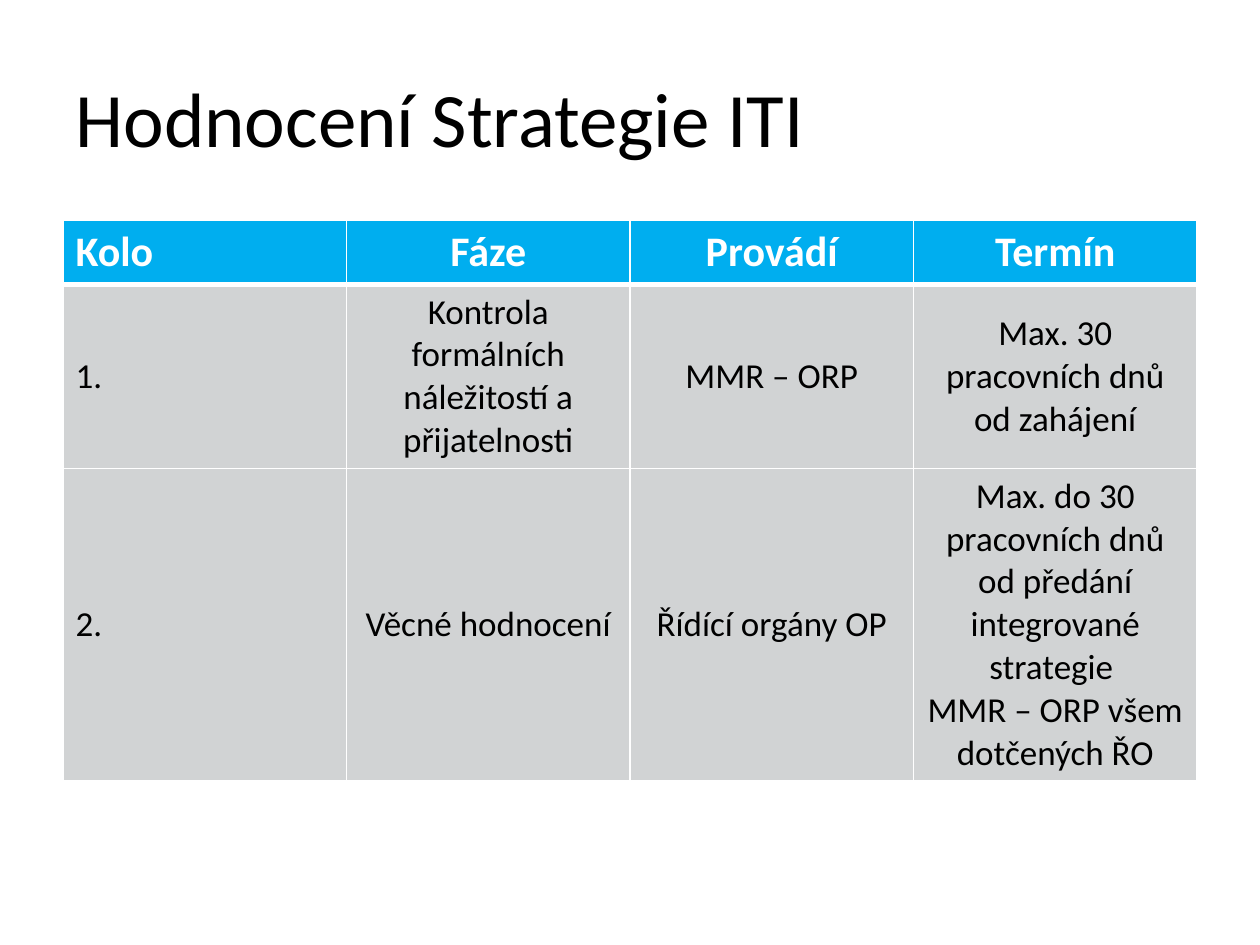
"""Build the slide on the evaluation rounds of the ITI strategy."""
from dataclasses import dataclass

from lxml.etree import SubElement
from pptx import Presentation
from pptx.dml.color import RGBColor as Color
from pptx.enum.text import MSO_ANCHOR as Anchor, PP_ALIGN as Align
from pptx.oxml.ns import qn
from pptx.util import Inches, Pt

TITLE = "Hodnocení Strategie ITI"
ROUNDS = [
    ["Kolo", "Fáze", "Provádí", "Termín"],
    ["1.", "Kontrola formálních náležitostí a přijatelnosti", "MMR – ORP",
     "Max. 30 pracovních dnů od zahájení"],
    ["2.", "Věcné hodnocení", "Řídící orgány OP",
     "Max. do 30 pracovních dnů od předání integrované strategie \n"
     "MMR – ORP všem dotčených ŘO"],
]


@dataclass(frozen=True)
class Theme:
    font: str = "Calibri"
    text: str = "000000"
    light: str = "FFFFFF"
    header: str = "00AEEF"
    body: str = "D1D3D4"
    title_size: int = 44
    header_size: int = 24
    body_size: int = 20
    thin: int = 1
    thick: int = 3


THEME = Theme()
WIDTH, HEIGHT = Inches(10), Inches(7.5)
MARGIN = int(WIDTH * 0.05)
CONTENT_WIDTH = WIDTH - 2 * MARGIN
TITLE_TOP, TITLE_HEIGHT = int(HEIGHT * 0.04), Inches(1.25)
TABLE_TOP, TABLE_HEIGHT = Inches(1.75), Inches(4.37)
ROW_HEIGHT = Inches(0.41)


def write(frame, text, size, color, bold=False, align=Align.LEFT):
    """Fill a text frame with one paragraph, broken at line ends."""
    frame.word_wrap = True
    para = frame.paragraphs[0]
    para.alignment = align
    for index, line in enumerate(text.split("\n")):
        if index:
            para.add_line_break()
        span = para.add_run()
        span.text = line
        span.font.name = THEME.font
        span.font.size = Pt(size)
        span.font.bold = bold
        span.font.color.rgb = Color.from_string(color)


def add_borders(cell, widths):
    """Draw the cell borders, given as point widths by side."""
    properties = cell._tc.get_or_add_tcPr()
    for side, width in widths.items():
        line = SubElement(properties, qn(f"a:ln{side}"), w=str(Pt(width)))
        fill = SubElement(line, qn("a:solidFill"))
        SubElement(fill, qn("a:srgbClr"), val=THEME.light)


def add_title(page):
    """Place and format the title."""
    box = page.shapes.title
    box.left, box.top = MARGIN, TITLE_TOP
    box.width, box.height = CONTENT_WIDTH, TITLE_HEIGHT
    box.text_frame.vertical_anchor = Anchor.MIDDLE
    write(box.text_frame, TITLE, THEME.title_size, THEME.text)


def add_rounds(page):
    """Add the table of evaluation rounds."""
    frame = page.shapes.add_table(len(ROUNDS), len(ROUNDS[0]), MARGIN, TABLE_TOP,
                                  CONTENT_WIDTH, TABLE_HEIGHT)
    table = frame.table
    for row, texts in enumerate(ROUNDS):
        table.rows[row].height = ROW_HEIGHT
        header = row == 0
        top = THEME.thick if row == 1 else THEME.thin
        bottom = THEME.thick if header else THEME.thin
        for column, text in enumerate(texts):
            cell = table.cell(row, column)
            add_borders(cell, {"L": THEME.thin, "R": THEME.thin, "T": top, "B": bottom})
            cell.fill.solid()
            cell.fill.fore_color.rgb = Color.from_string(
                THEME.header if header else THEME.body)
            cell.vertical_anchor = Anchor.MIDDLE
            write(cell.text_frame, text,
                  THEME.header_size if header else THEME.body_size,
                  THEME.light if header else THEME.text,
                  header, Align.CENTER if column else Align.LEFT)
    frame.height = TABLE_HEIGHT


def main():
    """Build and save the deck."""
    deck = Presentation()
    deck.slide_width, deck.slide_height = WIDTH, HEIGHT
    page = deck.slides.add_slide(deck.slide_layouts[5])
    add_title(page)
    add_rounds(page)
    deck.save("out.pptx")


if __name__ == "__main__":
    main()
